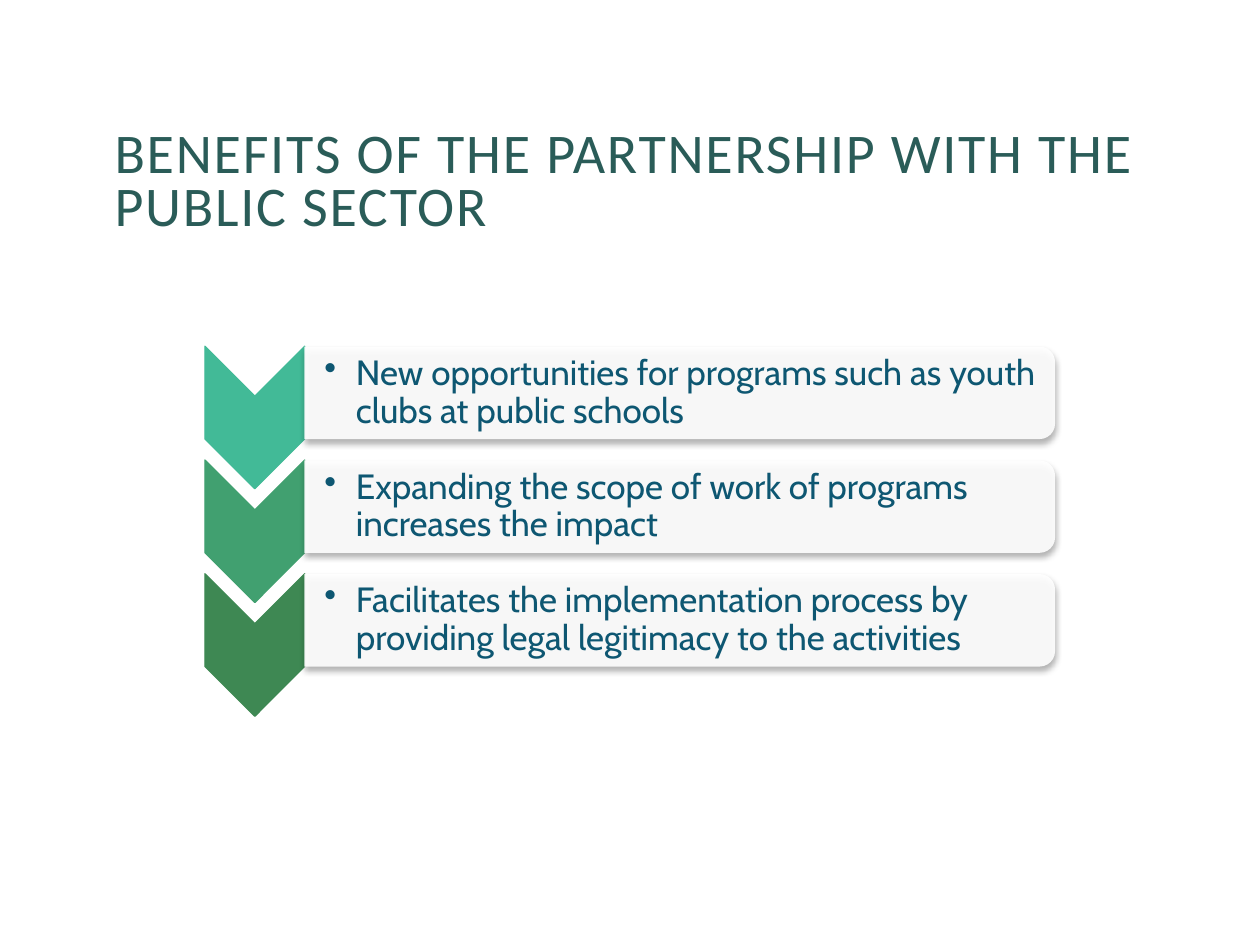
import pptx
import pptx.util
import pptx.dml.color
import pptx.enum.shapes
import pptx.enum.text
import pptx.oxml
import pptx.oxml.ns

Pt = pptx.util.Pt
RGB = pptx.dml.color.RGBColor
KIND = pptx.enum.shapes.MSO_SHAPE
qn = pptx.oxml.ns.qn
NS = pptx.oxml.ns.nsdecls("a")

HUES = {"title": "2A5C58", "text": "0E5772", "bar": "FFFFFF",
        "top": "42BA97", "mid": "41A070", "low": "3E8853"}

deck = pptx.Presentation()
deck.slide_width, deck.slide_height = Pt(720), Pt(540)
slide = deck.slides.add_slide(deck.slide_layouts[6])


def write(text, box, pads, font, size, hue, lead, track=0, bullet=False):
    frame = slide.shapes.add_textbox(*map(Pt, box)).text_frame
    frame.word_wrap = True
    frame.vertical_anchor = pptx.enum.text.MSO_ANCHOR.MIDDLE
    frame.margin_left, frame.margin_top, frame.margin_right, frame.margin_bottom = map(Pt, pads)
    para = frame.paragraphs[0]
    para.line_spacing = lead
    run = para.add_run()
    run.text = text
    run.font.name = font
    run.font.size = Pt(size)
    run.font.color.rgb = RGB.from_string(HUES[hue])
    if track:
        run.font._element.set("spc", str(track * 100))
    if bullet:
        props = para._p.get_or_add_pPr()
        props.set("marL", str(Pt(18)))
        props.set("indent", str(-Pt(18)))
        props.append(pptx.oxml.parse_xml(f'<a:buChar {NS} char="•"/>'))


def turn(kind, mid, size, hue):
    (x, y), (w, h) = mid, size
    shape = slide.shapes.add_shape(kind, Pt(x - w / 2), Pt(y - h / 2), Pt(w), Pt(h))
    shape.rotation = 90
    shape.shadow.inherit = False
    shape.fill.solid()
    shape.fill.fore_color.rgb = RGB.from_string(HUES[hue])
    return shape


write("BENEFITS OF THE PARTNERSHIP WITH THE PUBLIC SECTOR", (60.5, 46, 600, 118),
      (5, 3, 5, 3), "Calibri", 32, "title", 0.8, track=1)

steps = [
    ("top", "New opportunities for programs such as youth clubs at public schools"),
    ("mid", "Expanding the scope of work of programs increases the impact"),
    ("low", "Facilitates the implementation process by providing legal legitimacy to the activities"),
]
for i, (hue, text) in enumerate(steps):
    drop = 65 * i
    mark = turn(KIND.CHEVRON, (145.6, 238.6 + drop), (81.4, 57), hue)
    mark.line.color.rgb = RGB.from_string(HUES[hue])
    mark.line.width = Pt(0.75)

    bar = turn(KIND.ROUND_2_SAME_RECTANGLE, (388.4, 224.5 + drop), (52.9, 429), "bar")
    bar.line.fill.background()
    tint = bar._element.spPr.find(qn("a:solidFill"))[0]
    tint.append(pptx.oxml.parse_xml(f'<a:alpha {NS} val="90000"/>'))
    glow = bar._element.spPr.find(qn("a:effectLst"))
    glow.append(pptx.oxml.parse_xml(
        f'<a:outerShdw {NS} blurRad="{Pt(3.5)}" dist="{Pt(2.2)}" dir="5400000" rotWithShape="0">'
        '<a:srgbClr val="000000"><a:alpha val="32000"/></a:srgbClr></a:outerShdw>'))

    write(text, (174, 200.7 + drop, 426.4, 47.7), (11.4, 0.9, 0.9, 0.9),
          "Cabin", 20, "text", 0.9, bullet=True)

deck.save("out.pptx")
